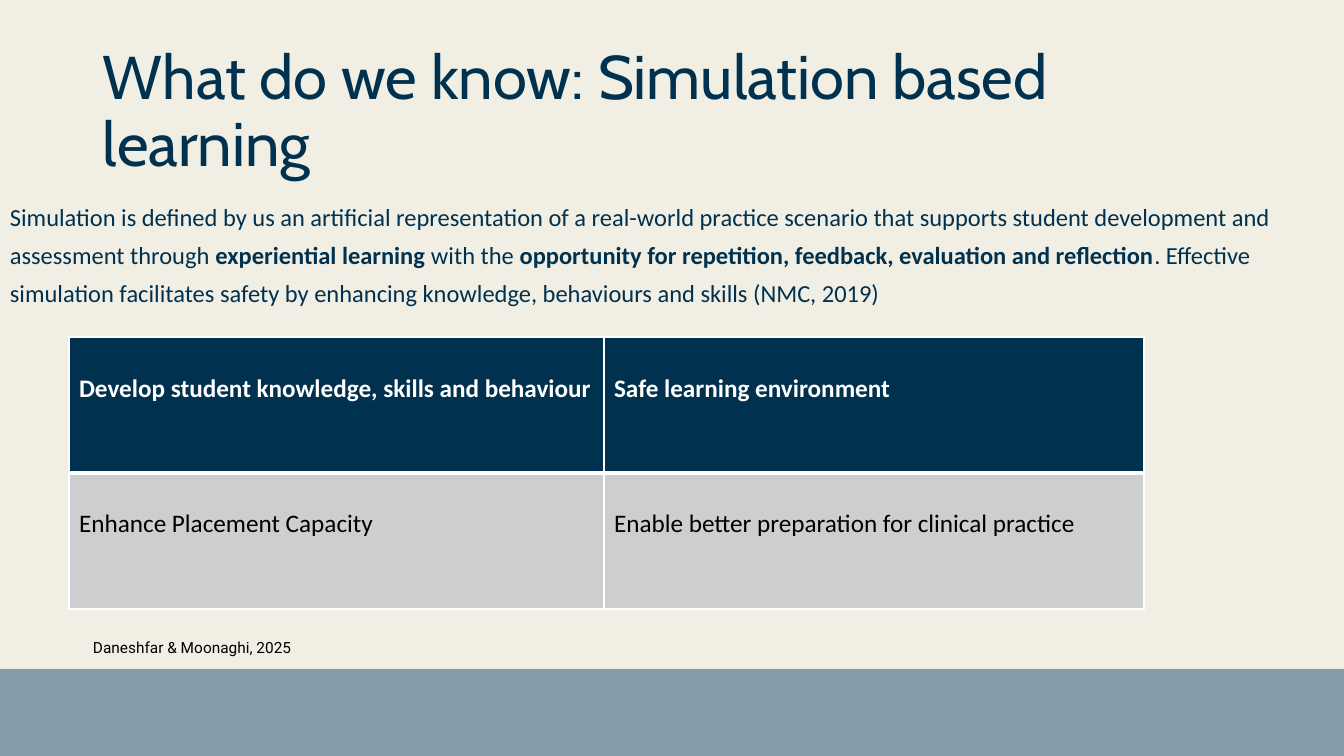
from lxml import etree
from pptx import Presentation
from pptx.dml.color import RGBColor
from pptx.enum.shapes import MSO_SHAPE
from pptx.enum.text import MSO_ANCHOR
from pptx.oxml.ns import qn
from pptx.util import Emu, Pt

RECT = MSO_SHAPE.RECTANGLE
TOP, MIDDLE = MSO_ANCHOR.TOP, MSO_ANCHOR.MIDDLE

CREAM = RGBColor(0xF1, 0xEF, 0xE4)
NAVY = RGBColor(0x00, 0x31, 0x4F)
SLATE = RGBColor(0x85, 0x9D, 0xAA)
GREY = RGBColor(0xCC, 0xCE, 0xD0)
WHITE = RGBColor(0xFF, 0xFF, 0xFF)
BLACK = RGBColor(0x00, 0x00, 0x00)

TITLE = "What do we know: Simulation based learning"
DEFINITION = [
    ("Simulation is defined by us an artificial representation of a real-world practice "
     "scenario that supports student development and assessment through ", False),
    ("experiential learning", True),
    (" with the ", False),
    ("opportunity for repetition, feedback, evaluation and reflection", True),
    (". Effective simulation facilitates safety by enhancing knowledge, behaviours "
     "and skills (NMC, 2019)", False),
]
BENEFITS = [
    ("Develop student knowledge, skills and behaviour", "Safe learning environment"),
    ("Enhance Placement Capacity", "Enable better preparation for clinical practice"),
]
ROW_STYLES = [
    {"fill": NAVY, "color": WHITE, "bold": True, "borders": {"L": 1, "R": 1, "T": 1, "B": 3}},
    {"fill": GREY, "color": BLACK, "bold": False, "borders": {"L": 1, "R": 1, "T": 3, "B": 1}},
]
COLUMNS = [535, 540]
ROW_HEIGHT = 136
CELL_TOP_MARGIN = 36
CITATION = "Daneshfar & Moonaghi, 2025"


def px(n):
    return Emu(round(n * 914400 / 100.8))


def write(tf, runs, font="Calibri", size=18, color=NAVY, bold=False, spacing=None):
    if isinstance(runs, str):
        runs = [(runs, bold)]
    p = tf.paragraphs[0]
    p.line_spacing = spacing
    for text, strong in runs:
        r = p.add_run()
        r.text = text
        r.font.name = font
        r.font.size = Pt(size)
        r.font.color.rgb = color
        r.font.bold = strong


def add_text(s, runs, box, anchor=TOP, **style):
    tf = s.shapes.add_textbox(*map(px, box)).text_frame
    tf.word_wrap = True
    tf.vertical_anchor = anchor
    write(tf, runs, **style)


def set_borders(cell, widths, color):
    tcPr = cell._tc.get_or_add_tcPr()
    for side, width in widths.items():
        ln = etree.SubElement(tcPr, qn("a:ln" + side), w=str(Pt(width)))
        fill = etree.SubElement(ln, qn("a:solidFill"))
        etree.SubElement(fill, qn("a:srgbClr"), val=str(color))


def add_benefits(s, left, top):
    size = sum(COLUMNS), ROW_HEIGHT * len(BENEFITS)
    table = s.shapes.add_table(len(BENEFITS), len(COLUMNS),
                               *map(px, (left, top, *size))).table
    for column, width in zip(table.columns, COLUMNS):
        column.width = px(width)
    for i, (texts, style) in enumerate(zip(BENEFITS, ROW_STYLES)):
        table.rows[i].height = px(ROW_HEIGHT)
        for j, text in enumerate(texts):
            cell = table.cell(i, j)
            set_borders(cell, style["borders"], WHITE)
            cell.fill.solid()
            cell.fill.fore_color.rgb = style["fill"]
            cell.margin_top = px(CELL_TOP_MARGIN)
            write(cell.text_frame, text, color=style["color"], bold=style["bold"])


def main():
    prs = Presentation()
    prs.slide_width, prs.slide_height = px(1344), px(756)
    s = prs.slides.add_slide(prs.slide_layouts[6])
    s.background.fill.solid()
    s.background.fill.fore_color.rgb = CREAM

    band = s.shapes.add_shape(RECT, *map(px, (0, 669, 1344, 87)))
    band.shadow.inherit = False
    band.fill.solid()
    band.fill.fore_color.rgb = SLATE
    band.line.fill.background()

    add_text(s, TITLE, (93, 40, 1159, 146), anchor=MIDDLE, font="Cabin", size=44, spacing=0.9)
    add_text(s, DEFINITION, (0, 188, 1318, 173), size=17.5, spacing=1.3)
    add_benefits(s, 69, 337)
    add_text(s, CITATION, (83, 633, 672, 30), font="Roboto", size=11, color=BLACK)
    prs.save("out.pptx")


if __name__ == "__main__":
    main()
